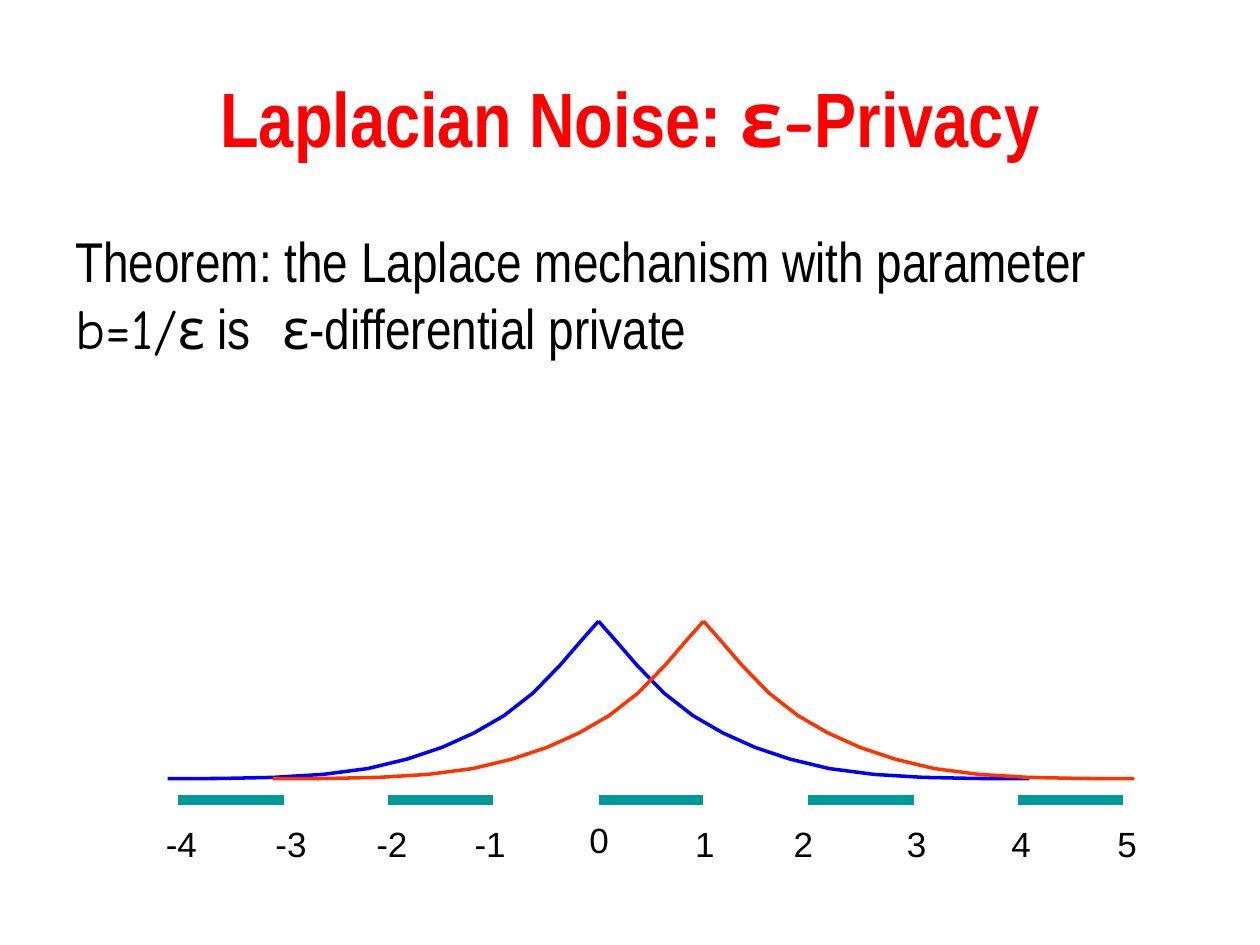
from lxml import etree
from pptx import Presentation
from pptx.dml.color import RGBColor
from pptx.enum.shapes import MSO_CONNECTOR
from pptx.enum.text import MSO_ANCHOR, MSO_AUTO_SIZE, PP_ALIGN
from pptx.oxml.ns import qn
from pptx.util import Inches, Pt

NARROW, COMIC = "Arial Narrow", "Comic Neue"
ZERO, UNIT, AXIS_Y = 4.75, 5 / 6, 6.35


def color(hex_string):
    return RGBColor.from_string(hex_string)


def write(frame, runs, size, hex_color="000000", bold=False,
          align=PP_ALIGN.LEFT, anchor=MSO_ANCHOR.TOP, wrap=True, before=0):
    """Fill a text frame with one paragraph of (text, font name) runs."""
    frame.word_wrap = wrap
    frame.auto_size = MSO_AUTO_SIZE.NONE if wrap else MSO_AUTO_SIZE.SHAPE_TO_FIT_TEXT
    frame.vertical_anchor = anchor
    paragraph = frame.paragraphs[0]
    paragraph.alignment = align
    paragraph.space_before = Pt(before)
    for text, font_name in runs:
        run = paragraph.add_run()
        run.text = text
        run.font.name = font_name
        run.font.size = Pt(size)
        run.font.bold = bold
        run.font.color.rgb = color(hex_color)


prs = Presentation()
prs.slide_width, prs.slide_height = Inches(10), Inches(7.5)
slide = prs.slides.add_slide(prs.slide_layouts[5])
shapes = slide.shapes

# Title
title = shapes.title
title.left, title.top = Inches(0.5), Inches(0.3)
title.width, title.height = Inches(9), Inches(1.25)
write(title.text_frame,
      [("Laplacian Noise: ", NARROW), ("ε-", COMIC), ("Privacy", NARROW)],
      size=44, hex_color="FF0000", bold=True,
      align=PP_ALIGN.CENTER, anchor=MSO_ANCHOR.MIDDLE)

# Theorem
theorem = shapes.add_textbox(Inches(0.5), Inches(1.75), Inches(9), Inches(4.95))
write(theorem.text_frame,
      [("Theorem: the Laplace mechanism with parameter ", NARROW),
       ("b=1/ε", COMIC), (" is ", NARROW), (" ε", COMIC),
       ("-differential private", NARROW)],
      size=32, before=6.4)

# Density curves: Bezier control points as (distance from the peak, y)
tail = [(3.42, 6.18), (2.85, 6.18), (2.28, 6.18), (1.83, 6.1), (1.39, 6.01),
        (1.06, 5.88), (0.75, 5.68), (0.44, 5.49), (0.13, 5.06), (0, 4.93)]
STEPS = 4
half_curve = [tail[0]]
for start in range(0, len(tail) - 1, 3):
    controls = tail[start:start + 4]
    for step in range(1, STEPS + 1):
        t = step / STEPS
        weights = ((1 - t) ** 3, 3 * t * (1 - t) ** 2, 3 * t ** 2 * (1 - t), t ** 3)
        half_curve.append(tuple(sum(w * point[axis] for w, point in zip(weights, controls))
                                for axis in (0, 1)))

for peak, curve_color in ((ZERO, "0000FF"), (ZERO + UNIT, "FF3300")):
    for side in (-1, 1):
        points = [(Inches(peak + side * distance), Inches(y)) for distance, y in half_curve]
        builder = shapes.build_freeform(*points[0])
        builder.add_line_segments(points[1:], close=False)
        curve = builder.convert_to_shape()
        curve.shadow.inherit = False
        curve.fill.background()
        curve.line.color.rgb = color(curve_color)
        curve.line.width = Pt(2)

# Axis: every second unit is drawn as a thick dash
for value in range(-4, 5, 2):
    left = ZERO + value * UNIT
    dash = shapes.add_connector(MSO_CONNECTOR.STRAIGHT, Inches(left), Inches(AXIS_Y),
                                Inches(left + UNIT), Inches(AXIS_Y))
    dash.line.color.rgb = color("009999")
    dash.line.width = Pt(6)
    etree.SubElement(dash.element.spPr, qn("a:effectLst"))

# Axis labels with their left edges
label_lefts = {-4: 1.2, -3: 2.07, -2: 2.87, -1: 3.65, 0: 4.55,
               1: 5.39, 2: 6.17, 3: 7.07, 4: 7.9, 5: 8.74}
for value, left in label_lefts.items():
    width = 0.48 if value < 0 else 0.41
    top = 6.45 if value == 0 else 6.48
    label = shapes.add_textbox(Inches(left), Inches(top), Inches(width), Inches(0.43))
    write(label.text_frame, [(str(value), "Arial")], size=20,
          align=PP_ALIGN.CENTER, wrap=False)

prs.save("out.pptx")
